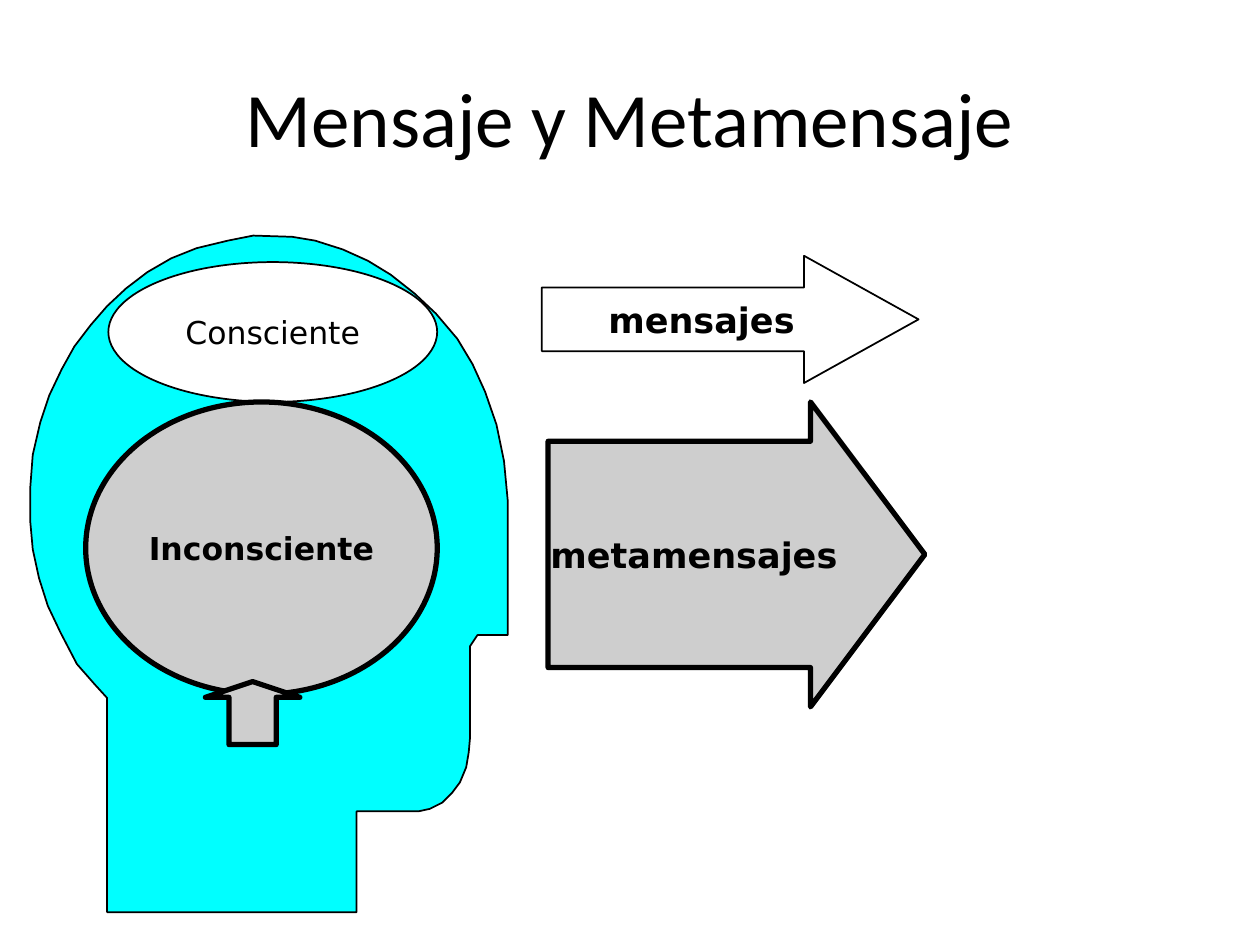
from dataclasses import dataclass

from pptx import Presentation
from pptx.dml.color import RGBColor
from pptx.enum.shapes import MSO_SHAPE as Preset
from pptx.enum.text import MSO_ANCHOR as Anchor, PP_ALIGN as Align
from pptx.util import Inches, Pt


@dataclass(frozen=True)
class Theme:
    """Colours, fonts and type sizes of the slide."""
    ink: RGBColor = RGBColor(0, 0, 0)
    skin: RGBColor = RGBColor(0, 255, 255)
    light: RGBColor = RGBColor(255, 255, 255)
    dark: RGBColor = RGBColor(0xCE, 0xCE, 0xCE)
    title_font: str = "Calibri"
    label_font: str = "DejaVu Sans"
    title_size: int = 44
    arrow_size: int = 20
    mind_size: int = 18
    thin: int = 1
    thick: int = 3


THEME = Theme()

HEAD_OUTLINE = [
    (259, 457), (259, 537), (61, 537), (61, 367), (51, 356), (37, 340),
    (24, 315), (14, 294), (7, 272), (2, 249), (0, 227), (0, 200), (2, 174),
    (8, 148), (15, 127), (25, 106), (35, 88), (48, 71), (61, 56), (76, 42),
    (93, 29), (112, 18), (132, 10), (157, 4), (177, 0), (208, 1), (226, 4),
    (248, 11), (268, 20), (286, 31), (305, 46), (322, 62), (339, 82),
    (351, 102), (361, 124), (370, 150), (376, 179), (379, 211), (379, 317),
    (355, 317), (349, 326), (349, 399), (348, 410), (346, 422), (341, 434),
    (335, 442), (327, 450), (317, 455), (308, 457),
]


def paint(shape, fill, width):
    """Give a shape its fill and black outline, without a shadow."""
    shape.shadow.inherit = False
    shape.fill.solid()
    shape.fill.fore_color.rgb = fill
    shape.line.color.rgb = THEME.ink
    shape.line.width = Pt(width)


def write(shape, text, font_name, size, bold=False, wrap=False):
    """Write one centred paragraph into a shape."""
    frame = shape.text_frame
    frame.word_wrap = wrap
    frame.vertical_anchor = Anchor.MIDDLE
    paragraph = frame.paragraphs[0]
    paragraph.alignment = Align.CENTER
    run = paragraph.add_run()
    run.text = text
    run.font.color.rgb = THEME.ink
    for name, value in {"name": font_name, "size": Pt(size), "bold": bold}.items():
        setattr(run.font, name, value)


def add_preset(slide, preset, box, fill, width, adjustments=()):
    """Draw a preset shape in a box given in inches."""
    shape = slide.shapes.add_shape(preset, *map(Inches, box))
    for index, value in enumerate(adjustments):
        shape.adjustments[index] = value
    paint(shape, fill, width)
    return shape


def add_title(slide, box):
    """Place the slide title."""
    title = slide.shapes.add_textbox(*map(Inches, box))
    write(title, "Mensaje y Metamensaje", THEME.title_font, THEME.title_size, wrap=True)


def add_head(slide, left, top):
    """Draw the head in profile with both parts of the mind."""
    builder = slide.shapes.build_freeform(*HEAD_OUTLINE[0], scale=Inches(0.01))
    builder.add_line_segments(HEAD_OUTLINE[1:], close=True)
    paint(builder.convert_to_shape(Inches(left), Inches(top)), THEME.skin, THEME.thin)
    minds = [
        ("Consciente", (0.62, 0.21, 2.61, 1.11), THEME.light, THEME.thin, False),
        ("Inconsciente", (0.44, 1.32, 2.79, 2.32), THEME.dark, THEME.thick, True),
    ]
    for text, (x, y, width, height), fill, line, bold in minds:
        box = (left + x, top + y, width, height)
        mind = add_preset(slide, Preset.OVAL, box, fill, line)
        write(mind, text, THEME.label_font, THEME.mind_size, bold)


def add_messages(slide, left, top):
    """Draw the labelled arrows leaving the head."""
    arrows = [
        ("mensajes", (0, 0, 2.99, 1.01), THEME.light, THEME.thin, (0.5, 0.9)),
        ("metamensajes", (0.05, 1.16, 2.99, 2.42), THEME.dark, THEME.thick, (0.742, 0.375)),
    ]
    for text, (x, y, width, height), fill, line, adjustments in arrows:
        box = (left + x, top + y, width, height)
        arrow = add_preset(slide, Preset.RIGHT_ARROW, box, fill, line, adjustments)
        write(arrow, text, THEME.label_font, THEME.arrow_size, bold=True)


def main():
    """Build and save the slide."""
    presentation = Presentation()
    presentation.slide_width, presentation.slide_height = Inches(10), Inches(7.5)
    slide = presentation.slides.add_slide(presentation.slide_layouts[6])
    add_title(slide, (0.5, 0.3, 9, 1.25))
    add_head(slide, 0.24, 1.87)
    add_messages(slide, 4.3, 2.03)
    add_preset(slide, Preset.UP_ARROW, (1.63, 5.41, 0.75, 0.5),
               THEME.dark, THEME.thick, (0.5, 0.25))
    presentation.save("out.pptx")


if __name__ == "__main__":
    main()
